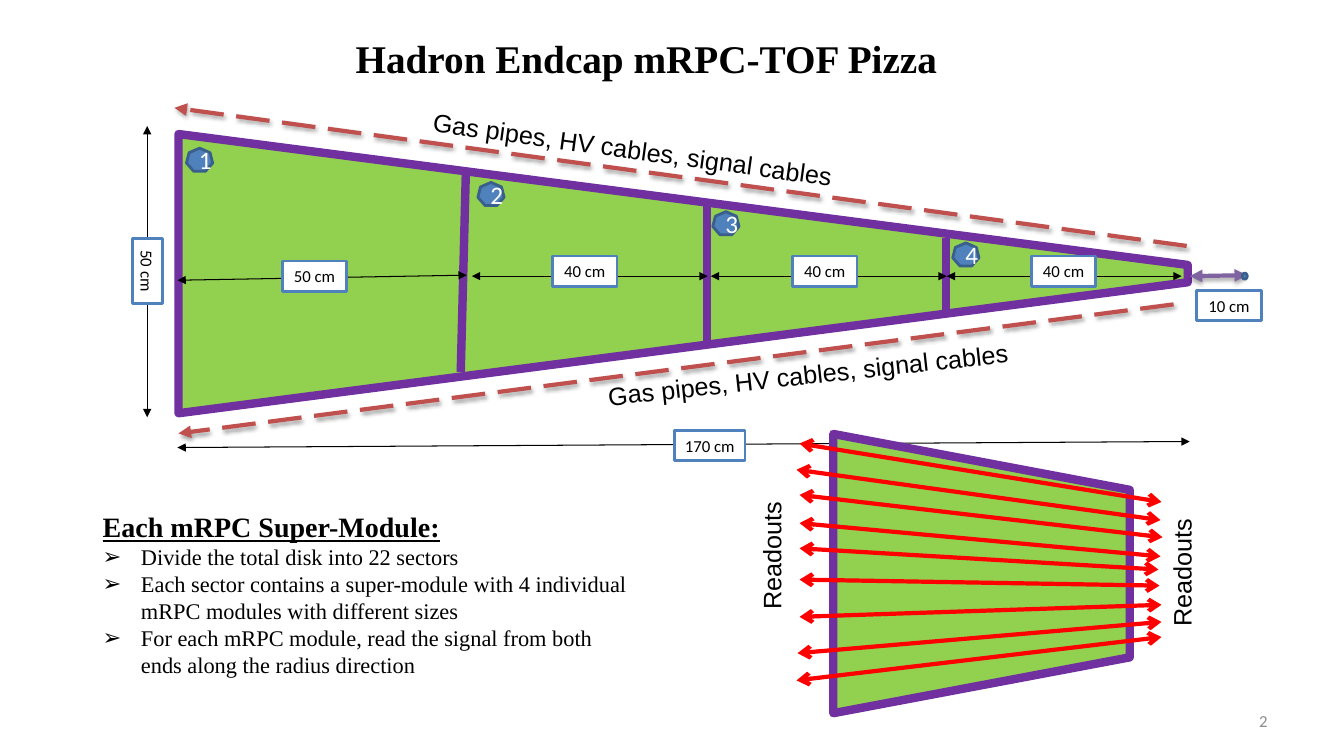
from lxml import etree
from pptx import Presentation
from pptx.dml.color import RGBColor
from pptx.enum.dml import MSO_LINE
from pptx.enum.shapes import MSO_CONNECTOR, MSO_SHAPE as SHAPE
from pptx.enum.text import MSO_ANCHOR as ANCHOR, PP_ALIGN as ALIGN
from pptx.oxml.ns import qn
from pptx.util import Inches, Pt

# Content
TITLE = "Hadron Endcap mRPC-TOF Pizza"
HEADING = "Each mRPC Super-Module:"
POINTS = [
    "Divide the total disk into 22 sectors",
    "Each sector contains a super-module with 4 individual mRPC modules with different sizes",
    "For each mRPC module, read the signal from both ends along the radius direction",
]
PAGE_NUMBER = "2"
SERVICES = "Gas pipes, HV cables, signal cables"
# Dashed arrow start and end, then text left, top and rotation
SERVICE_RUNS = [
    ((11.77, 2.44), (1.73, 1.07), 4.18, 1.31, 7.8),
    ((11.64, 3.02), (1.77, 4.3), 5.92, 3.49, -6.2),
]
DIVIDERS = [((7.01, 2.02), (7.01, 3.4)), ((9.38, 2.36), (9.38, 3.08)),
            ((4.62, 1.73), (4.57, 3.69))]
# Arrow start and end, label, label left, top, width, rotation
DIMENSIONS = [
    ((1.46, 1.25), (1.46, 4.14), "50 cm", 1.14, 2.54, 0.64, 90),
    ((1.76, 2.78), (4.63, 2.73), "50 cm", 2.8, 2.59, 0.64, 0),
    ((4.68, 2.74), (7.02, 2.74), "40 cm", 5.48, 2.54, 0.64, 0),
    ((7.05, 2.74), (9.39, 2.74), "40 cm", 7.86, 2.54, 0.64, 0),
    ((9.39, 2.74), (11.72, 2.74), "40 cm", 10.23, 2.54, 0.64, 0),
    ((1.76, 4.44), (11.8, 4.38), "170 cm", 6.69, 4.27, 0.7, 0),
]
MODULE_CORNERS = [(1.85, 1.47), (4.74, 1.81), (7.07, 2.1), (9.45, 2.41)]
READOUT_ARROWS = [
    ((7.93, 4.4), (11.52, 4.98)), ((7.9, 4.66), (11.51, 5.16)),
    ((7.93, 4.91), (11.53, 5.33)), ((7.93, 5.19), (11.51, 5.52)),
    ((7.93, 5.44), (11.49, 5.65)), ((7.93, 5.75), (11.5, 5.81)),
    ((7.93, 6.12), (11.52, 6)), ((7.91, 6.48), (11.52, 6.17)),
    ((7.9, 6.75), (11.52, 6.32)),
]
READOUT_LABELS = [(10.8, 5.48), (6.73, 5.31)]

GREEN, PURPLE, BLUE, NAVY = "92D050", "7030A0", "4F81BD", "3A5F8C"
BLACK, WHITE, RED, BRICK, LILAC, GRAY = "000000", "FFFFFF", "FF0000", "C0504D", "8064A2", "8C8C8C"
SERIF = "Times New Roman"

deck = Presentation()
deck.slide_width, deck.slide_height = Inches(13.33), Inches(7.5)
page = deck.slides.add_slide(deck.slide_layouts[6])


def color(code):
    return RGBColor.from_string(code)


def add_child(parent, tag, **attributes):
    return etree.SubElement(parent, qn(tag), attributes)


def write(para, text, size=12, font="Calibri", fill=BLACK, align=ALIGN.LEFT,
          bold=False, underline=False):
    para.alignment = align
    span = para.add_run()
    span.text = text
    span.font.size, span.font.name = Pt(size), font
    span.font.bold, span.font.underline = bold, underline
    span.font.color.rgb = color(fill)


def add_text(text, left, top, width, height, rotation=0, anchor=ANCHOR.TOP, **style):
    box = page.shapes.add_textbox(Inches(left), Inches(top), Inches(width), Inches(height))
    box.rotation = rotation
    box.text_frame.word_wrap = True
    box.text_frame.vertical_anchor = anchor
    write(box.text_frame.paragraphs[0], text, **style)
    return box


def add_shape(kind, left, top, width, height, fill, line, weight=2, rotation=0):
    shape = page.shapes.add_shape(kind, Inches(left), Inches(top), Inches(width), Inches(height))
    shape.shadow.inherit = False
    shape.rotation = rotation
    shape.fill.solid()
    shape.fill.fore_color.rgb = color(fill)
    shape.line.color.rgb, shape.line.width = color(line), Pt(weight)
    return shape


def add_line(start, end, line, weight, head=None, tail=None, dash=None, shadow=False):
    link = page.shapes.add_connector(MSO_CONNECTOR.STRAIGHT,
                                     *[Inches(value) for value in start + end])
    link.line.color.rgb, link.line.width = color(line), Pt(weight)
    if dash:
        link.line.dash_style = dash
    properties = link._element.spPr
    for tag, kind in (("a:headEnd", head), ("a:tailEnd", tail)):
        if kind:
            add_child(properties.find(qn("a:ln")), tag, type=kind)
    effects = add_child(properties, "a:effectLst")
    if shadow:
        outer = add_child(effects, "a:outerShdw", blurRad=str(Pt(3.1)), dist=str(Pt(1.8)),
                          dir="5400000", rotWithShape="0")
        add_child(add_child(outer, "a:srgbClr", val=BLACK), "a:alpha", val="35000")


def add_label(text, left, top, width=0.64, rotation=0):
    label = add_shape(SHAPE.RECTANGLE, left, top, width, 0.3, WHITE, BLUE, rotation=rotation)
    frame = label.text_frame
    frame.word_wrap = False
    frame.vertical_anchor = ANCHOR.MIDDLE
    write(frame.paragraphs[0], text, align=ALIGN.CENTER)


# Sector with its module dividers
sector = add_shape(SHAPE.TRAPEZOID, 5.39, -2.29, 2.77, 10.01, GREEN, PURPLE, 6, 90)
sector.adjustments[0] = 0.469
for start, end in DIVIDERS:
    add_line(start, end, PURPLE, 6)

# Dimensions
for start, end, text, left, top, width, rotation in DIMENSIONS:
    add_line(start, end, BLACK, 0.75, "triangle", "triangle")
    add_label(text, left, top, width, rotation)

# Gap to the beam point
add_label("10 cm", 11.87, 2.88)
add_line((11.8, 2.74), (12.37, 2.73), LILAC, 3, "triangle", "triangle", shadow=True)
add_shape(SHAPE.OVAL, 12.32, 2.71, 0.05, 0.06, BLUE, NAVY)

# Module numbers
for number, (left, top) in enumerate(MODULE_CORNERS, 1):
    badge = add_shape(SHAPE.HEPTAGON, left, top, 0.26, 0.23, BLUE, NAVY)
    badge.text_frame.vertical_anchor = ANCHOR.MIDDLE
    write(badge.text_frame.paragraphs[0], str(number), size=18, fill=WHITE, align=ALIGN.CENTER)

# Pipes and cables along both edges
for start, end, left, top, rotation in SERVICE_RUNS:
    add_line(start, end, BRICK, 3, tail="triangle", dash=MSO_LINE.LONG_DASH, shadow=True)
    add_text(SERVICES, left, top, 4.63, 0.4, rotation, size=18, font="Arial")

add_text(TITLE, -0.26, 0.29, 13.34, 0.57, size=28, font=SERIF, bold=True, align=ALIGN.CENTER)

# Single module with readouts at both ends
add_shape(SHAPE.FLOWCHART_MANUAL_OPERATION, 8.35, 4.22, 2.77, 2.94, GREEN, PURPLE, 6, 270)
for start, end in READOUT_ARROWS:
    add_line(start, end, RED, 3, "arrow", "arrow")
for left, top in READOUT_LABELS:
    add_text("Readouts", left, top, 1.84, 0.4, 270, size=18, font="Arial", align=ALIGN.CENTER)

# Description
notes = add_text(HEADING, 0.92, 5.01, 5.41, 1.78, size=20, font=SERIF, bold=True, underline=True)
for point in POINTS:
    para = notes.text_frame.add_paragraph()
    layout = para._p.get_or_add_pPr()
    layout.set("marL", str(Inches(0.38)))
    layout.set("indent", str(Inches(-0.38)))
    add_child(layout, "a:buFont", typeface="Arial")
    add_child(layout, "a:buChar", char="➢")
    write(para, point, size=16, font=SERIF)

add_text(PAGE_NUMBER, 9.56, 6.95, 3.11, 0.4, anchor=ANCHOR.MIDDLE, fill=GRAY, align=ALIGN.RIGHT)

deck.save("out.pptx")
